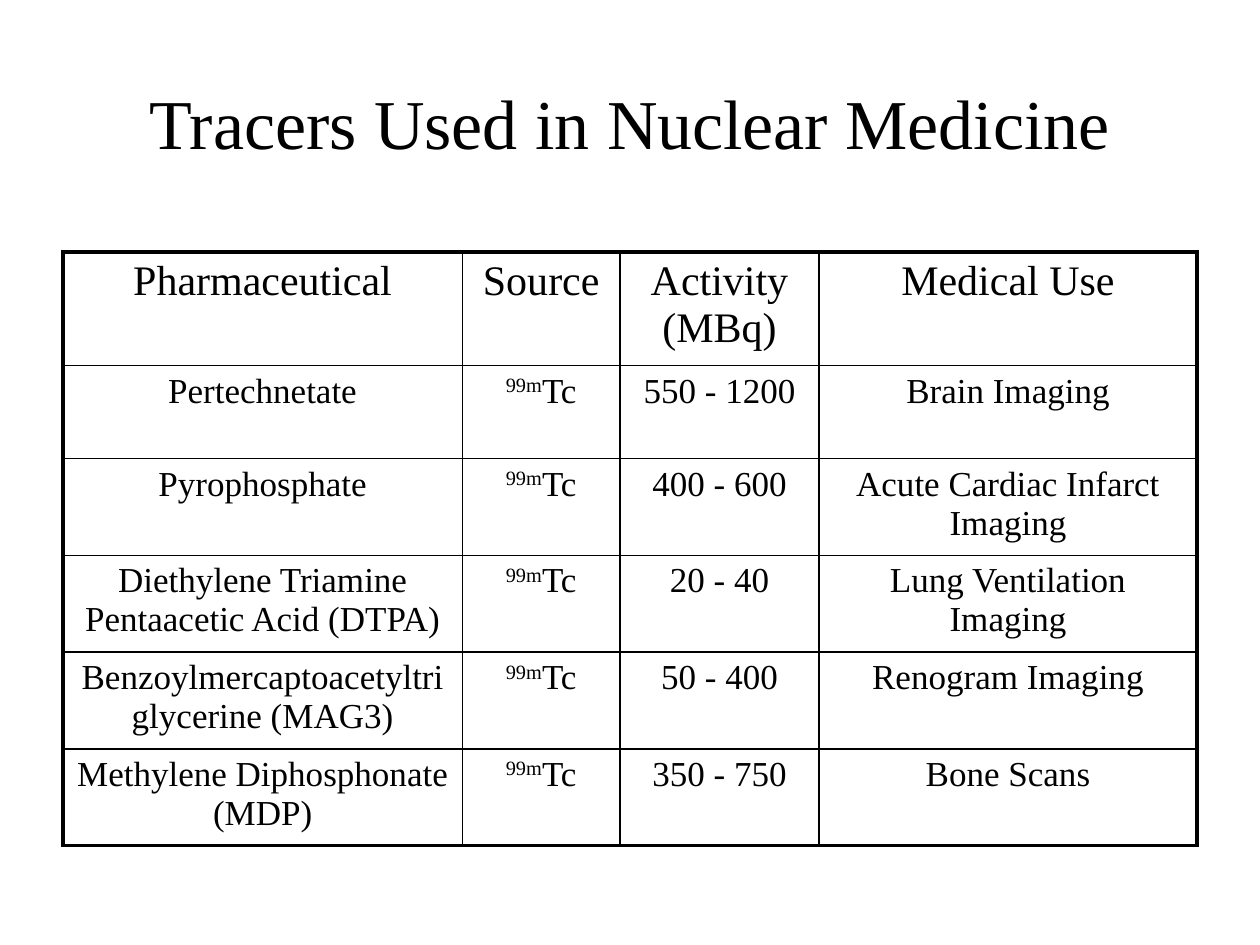
import pptx
import pptx.dml.color
import pptx.enum.text
import pptx.util
from lxml import etree
from pptx.oxml.ns import qn
from pptx.util import Cm

TITLE = "Tracers Used in Nuclear Medicine"
HEADERS = ["Pharmaceutical", "Source", "Activity (MBq)", "Medical Use"]
MASS, ELEMENT = "99m", "Tc"
TRACERS = [
    ("Pertechnetate", "550 - 1200", "Brain Imaging"),
    ("Pyrophosphate", "400 - 600", "Acute Cardiac Infarct Imaging"),
    ("Diethylene Triamine Pentaacetic Acid (DTPA)", "20 - 40", "Lung Ventilation Imaging"),
    ("Benzoylmercaptoacetyltriglycerine (MAG3)", "50 - 400", "Renogram Imaging"),
    ("Methylene Diphosphonate (MDP)", "350 - 750", "Bone Scans"),
]
COLUMN_WIDTHS = [8.05, 3.18, 4.01, 7.62]
HEADER_HEIGHT, ROW_HEIGHT = 2.11, 1.88
TABLE_LEFT, TABLE_TOP = 1.27, 5.08
INK = "000000"
FONT = "Times New Roman"
OUTER, INNER = 2.25, 1


def color(value):
    return pptx.dml.color.RGBColor.from_string(value)


def write(frame, text, size=20, superscript=""):
    para = frame.paragraphs[0]
    para.alignment = pptx.enum.text.PP_ALIGN.CENTER
    for part, baseline in ((superscript, 30000), (text, 0)):
        if not part:
            continue
        span = para.add_run()
        span.text = part
        span.font.name = FONT
        span.font.size = pptx.util.Pt(size)
        span.font.color.rgb = color(INK)
        if baseline:
            span.font._element.set("baseline", str(baseline))


def add_border(cell, side, width):
    properties = cell._tc.get_or_add_tcPr()
    line = etree.SubElement(properties, qn(f"a:ln{side}"), w=str(pptx.util.Pt(width)))
    fill = etree.SubElement(line, qn("a:solidFill"))
    etree.SubElement(fill, qn("a:srgbClr"), val=INK)


def add_title(page):
    box = page.shapes.add_textbox(Cm(1.9), Cm(0.85), Cm(21.6), Cm(3.18))
    box.text_frame.word_wrap = True
    box.text_frame.vertical_anchor = pptx.enum.text.MSO_ANCHOR.MIDDLE
    write(box.text_frame, TITLE, size=40)


def add_tracer_table(page):
    rows = [HEADERS] + [(name, ELEMENT, activity, use) for name, activity, use in TRACERS]
    heights = [HEADER_HEIGHT] + [ROW_HEIGHT] * len(TRACERS)
    table = page.shapes.add_table(
        len(rows), len(HEADERS), Cm(TABLE_LEFT), Cm(TABLE_TOP),
        Cm(sum(COLUMN_WIDTHS)), Cm(sum(heights))).table
    table.first_row = False
    table.horz_banding = False
    for column, width in zip(table.columns, COLUMN_WIDTHS):
        column.width = Cm(width)
    for row, height in zip(table.rows, heights):
        row.height = Cm(height)

    last_row, last_column = len(rows) - 1, len(HEADERS) - 1
    for i, row in enumerate(rows):
        for j, text in enumerate(row):
            cell = table.cell(i, j)
            write(cell.text_frame, text, size=20 if i else 24,
                  superscript=MASS if i and j == 1 else "")
            edges = {"L": j == 0, "R": j == last_column, "T": i == 0, "B": i == last_row}
            for side, is_outer in edges.items():
                add_border(cell, side, OUTER if is_outer else INNER)
            cell.fill.background()


def main():
    deck = pptx.Presentation()
    deck.slide_width, deck.slide_height = Cm(25.4), Cm(19.05)
    page = deck.slides.add_slide(deck.slide_layouts[6])
    add_title(page)
    add_tracer_table(page)
    deck.save("out.pptx")


if __name__ == "__main__":
    main()
